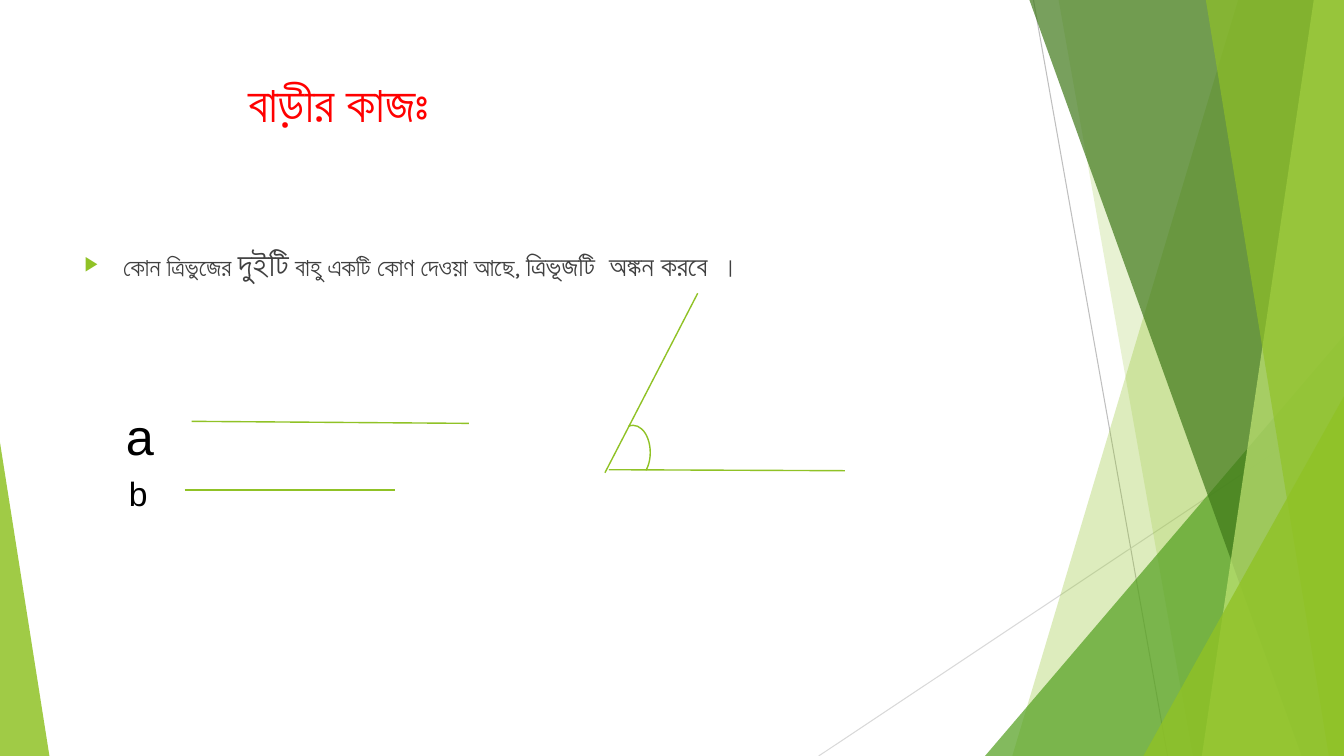
from lxml.etree import SubElement
from pptx import Presentation
from pptx.dml.color import RGBColor
from pptx.enum.shapes import MSO_CONNECTOR, MSO_SHAPE
from pptx.enum.text import MSO_ANCHOR, MSO_AUTO_SIZE, PP_ALIGN
from pptx.oxml.ns import qn
from pptx.util import Inches, Pt

WIDTH, HEIGHT = 13.33, 7.5
GREEN = "90C226"
FACETS = [
    ("band", 12.28, 10.04, GREEN, 30),
    ("band", 10.5, 11.83, GREEN, 20),
    ("triangle", 9.77, 3.33, "54A021", 72),
    ("band", 10.21, 12.91, "3F7819", 70),
    ("band", 13.03, 11.92, "C0E474", 70),
    ("band", 11.96, 13.18, GREEN, 65),
    ("triangle", 11.34, 3.93, GREEN, 80),
]


def color(value):
    """Turn a hex string into a colour."""
    return RGBColor.from_string(value)


def fill_facet(shape, value, opacity):
    """Give a facet a translucent fill without outline or shadow."""
    shape.shadow.inherit = False
    shape.line.fill.background()
    shape.fill.solid()
    shape.fill.fore_color.rgb = color(value)
    choice = shape.fill._xPr.find(qn("a:solidFill"))[0]
    SubElement(choice, qn("a:alpha"), val=str(opacity * 1000))


def add_line(shapes, start, end, value=GREEN, weight=1):
    """Draw a straight line between two points in inches."""
    points = [Inches(length) for length in (*start, *end)]
    line = shapes.add_connector(MSO_CONNECTOR.STRAIGHT, *points)
    line.line.color.rgb = color(value)
    line.line.width = Pt(weight)
    SubElement(line._element.spPr, qn("a:effectLst"))


def add_triangle(shapes, box, apex, value, opacity):
    """Draw a right-angled facet in a box."""
    triangle = shapes.add_shape(MSO_SHAPE.ISOSCELES_TRIANGLE, *map(Inches, box))
    triangle.adjustments[0] = apex
    fill_facet(triangle, value, opacity)


def add_band(shapes, top, bottom, value, opacity):
    """Draw a facet from a slanted left edge to the right slide edge."""
    builder = shapes.build_freeform(Inches(top), 0, 1.0)
    corners = [(WIDTH, 0), (WIDTH, HEIGHT), (bottom, HEIGHT)]
    builder.add_line_segments([(Inches(x), Inches(y)) for x, y in corners])
    fill_facet(builder.convert_to_shape(), value, opacity)


def add_facets(slide):
    """Place the green facets behind everything else."""
    group = slide.shapes.add_group_shape()
    shapes = group.shapes
    add_line(shapes, (10.25, 0), (11.58, HEIGHT), "BFBFBF", 0.75)
    add_line(shapes, (WIDTH, 4.03), (8.12, HEIGHT), "D9D9D9", 0.75)
    for kind, first, second, value, opacity in FACETS:
        if kind == "band":
            add_band(shapes, first, second, value, opacity)
        else:
            box = (first, second, WIDTH - first, HEIGHT - second)
            add_triangle(shapes, box, 1, value, opacity)
    add_triangle(shapes, (0, 4.39, 0.49, HEIGHT - 4.39), 0, GREEN, 85)
    slide.shapes._spTree.insert(2, group._element)


def place(shape, box):
    """Move a shape to a box in inches."""
    shape.left, shape.top, shape.width, shape.height = map(Inches, box)


def add_run(paragraph, text, size, font, value):
    """Append a formatted run."""
    run = paragraph.add_run()
    run.text = text
    run.font.size = Pt(size)
    run.font.name = font
    run.font.color.rgb = color(value)


def fill_title(title, box):
    """Write the indented red heading."""
    place(title, box)
    frame = title.text_frame
    frame.auto_size = MSO_AUTO_SIZE.NONE
    frame.vertical_anchor = MSO_ANCHOR.TOP
    frame.margin_left = Inches(1.72)
    paragraph = frame.paragraphs[0]
    paragraph.alignment = PP_ALIGN.LEFT
    add_run(paragraph, "বাড়ীর কাজঃ", 36, "Karla", "FF0000")


def fill_task(body, box):
    """Write the bulleted task."""
    place(body, box)
    frame = body.text_frame
    frame.auto_size = MSO_AUTO_SIZE.NONE
    paragraph = frame.paragraphs[0]
    paragraph.space_before = Pt(10)
    properties = paragraph._p.get_or_add_pPr()
    properties.set("marL", str(Inches(0.38)))
    properties.set("indent", str(Inches(-0.38)))
    bullet_color = SubElement(properties, qn("a:buClr"))
    SubElement(bullet_color, qn("a:srgbClr"), val=GREEN)
    SubElement(properties, qn("a:buSzPct"), val="80000")
    SubElement(properties, qn("a:buChar"), char="▶")
    for text, size, font in [
        ("কোন ত্রিভুজের ", 18, "Karla"),
        ("দুইটি", 24, "Arial"),
        (" বাহু একটি কোণ দেওয়া আছে, ", 18, "Karla"),
        ("ত্রিভূজটি  অঙ্কন করবে  ।", 20, "Arial"),
    ]:
        add_run(paragraph, text, size, font, "404040")


def add_side(shapes, name, size, box, start, end):
    """Draw one given side with its letter."""
    add_line(shapes, start, end)
    label = shapes.add_textbox(*map(Inches, box))
    frame = label.text_frame
    frame.word_wrap = True
    frame.auto_size = MSO_AUTO_SIZE.SHAPE_TO_FIT_TEXT
    add_run(frame.paragraphs[0], name, size, "Arial", "000000")


def add_angle(shapes, left, top):
    """Draw the given angle with its arc."""
    add_line(shapes, (left + 0.92, top), (left, top + 1.78))
    add_line(shapes, (left + 0.04, top + 1.75), (left + 2.38, top + 1.76))
    box = (left + 0.11, top + 1.31, 0.34, 0.54)
    arc = shapes.add_shape(MSO_SHAPE.ARC, *map(Inches, box))
    arc.adjustments[0] = 155.46
    arc.adjustments[1] = 32.32
    arc.shadow.inherit = False
    arc.fill.background()
    arc.line.color.rgb = color(GREEN)
    arc.line.width = Pt(1)


def main():
    """Build and save the homework slide."""
    presentation = Presentation()
    presentation.slide_width = Inches(WIDTH)
    presentation.slide_height = Inches(HEIGHT)
    slide = presentation.slides.add_slide(presentation.slide_layouts[1])
    add_facets(slide)
    fill_title(slide.shapes.title, (0.74, 0.67, 9.4, 1.44))
    fill_task(slide.placeholders[1], (0.74, 2.36, 9.4, 4.24))
    add_side(slide.shapes, "a", 36, (1.15, 3.97, 0.68, 0.71), (1.9, 4.18), (4.65, 4.2))
    add_side(slide.shapes, "b", 24, (1.18, 4.64, 1.39, 0.5), (1.83, 4.86), (3.92, 4.86))
    add_angle(slide.shapes, 6, 2.91)
    presentation.save("out.pptx")


if __name__ == "__main__":
    main()
